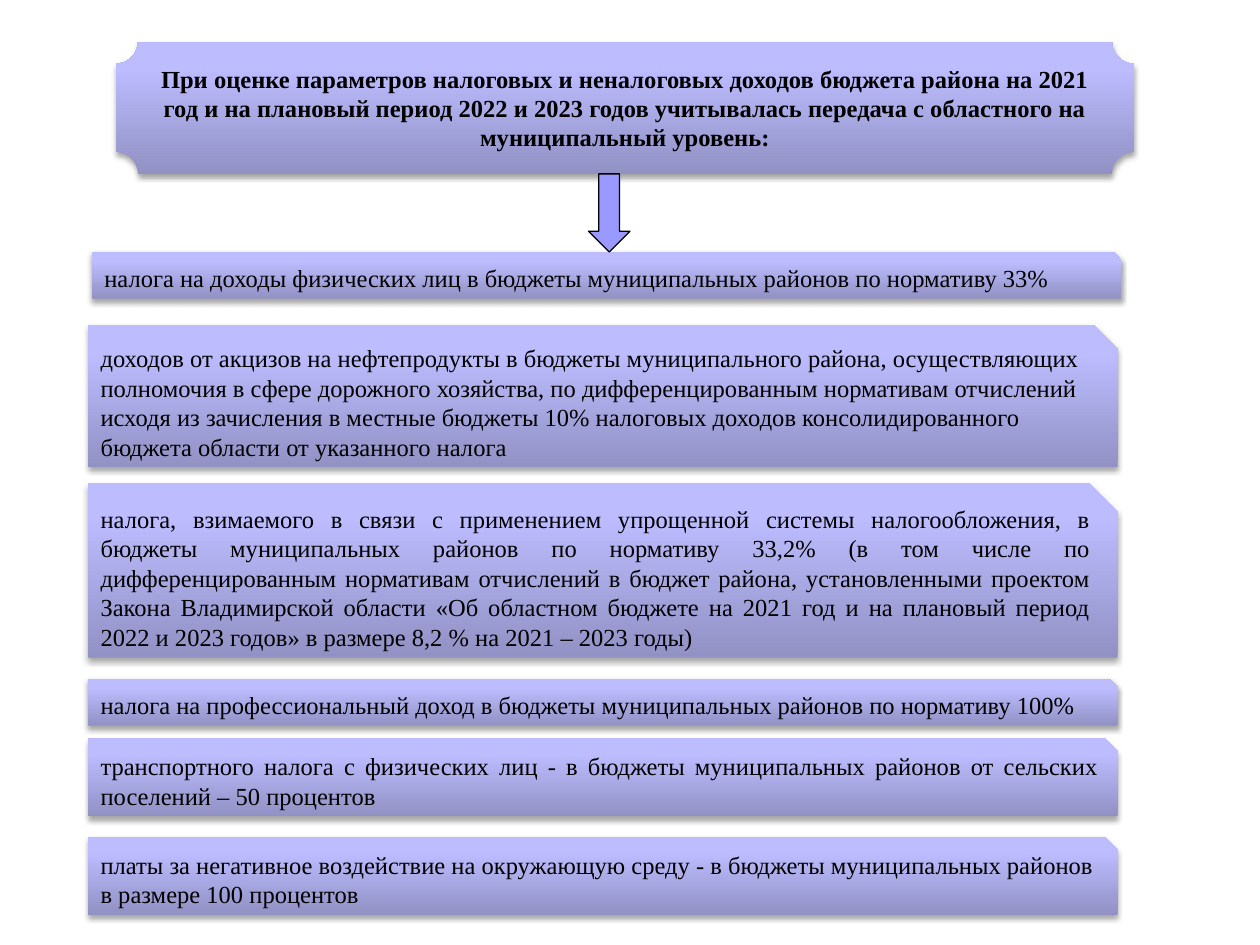
from copy import deepcopy

from lxml.etree import SubElement
from pptx import Presentation
from pptx.dml.color import RGBColor
from pptx.enum.shapes import MSO_SHAPE
from pptx.enum.text import MSO_ANCHOR, MSO_AUTO_SIZE, PP_ALIGN
from pptx.oxml.ns import qn
from pptx.util import Pt

GRADIENT = [(0, "9191C4"), (0.8, "BCBCFF"), (1, "BEBEFF")]
BOX_LEFT, BOX_WIDTH = 50.4, 588.24
TITLE = (
    "При оценке параметров налоговых и неналоговых доходов бюджета района на 2021 год "
    "и на плановый период 2022 и 2023 годов учитывалась передача с областного на "
    "муниципальный уровень:"
)
TAXES = [
    (52.56, 144, 26.64, PP_ALIGN.LEFT,
     "налога на доходы физических лиц в бюджеты муниципальных районов по нормативу 33%"),
    (BOX_LEFT, 185.76, 81.36, PP_ALIGN.LEFT,
     "доходов от акцизов на нефтепродукты в бюджеты муниципального района, осуществляющих "
     "полномочия в сфере дорожного хозяйства, по дифференцированным нормативам отчислений "
     "исходя из зачисления в местные бюджеты 10% налоговых доходов консолидированного "
     "бюджета области от указанного налога"),
    (BOX_LEFT, 275.76, 100.08, PP_ALIGN.JUSTIFY,
     "налога, взимаемого в связи с применением упрощенной системы налогообложения, в "
     "бюджеты муниципальных районов по нормативу 33,2% (в том числе по "
     "дифференцированным нормативам отчислений в бюджет района, установленными проектом "
     "Закона Владимирской области «Об областном бюджете на 2021 год и на плановый период "
     "2022 и 2023 годов» в размере 8,2 % на 2021 – 2023 годы)"),
    (BOX_LEFT, 388.08, 26.64, PP_ALIGN.LEFT,
     "налога на профессиональный доход в бюджеты муниципальных районов по нормативу 100%"),
    (BOX_LEFT, 421.92, 44.64, PP_ALIGN.JUSTIFY,
     "транспортного налога с физических лиц - в бюджеты муниципальных районов от сельских "
     "поселений – 50 процентов"),
    (BOX_LEFT, 478.08, 44.64, PP_ALIGN.LEFT,
     "платы за негативное воздействие на окружающую среду - в бюджеты муниципальных районов "
     "в размере 100 процентов"),
]


def color(value):
    """Turn a hex string into a colour."""
    return RGBColor.from_string(value)


def fill_gradient(shape):
    """Fill a shape with the vertical lilac gradient."""
    shape.fill.gradient()
    shape.fill.gradient_angle = 90
    stop_list = shape._element.spPr.find(".//" + qn("a:gsLst"))
    stop_list.append(deepcopy(stop_list[0]))
    for stop, (position, value) in zip(shape.fill.gradient_stops, GRADIENT):
        stop.position = position
        stop.color.rgb = color(value)


def add_shadow(shape):
    """Give a shape a soft black shadow below it."""
    shape.shadow.inherit = False
    effects = shape._element.spPr.find(qn("a:effectLst"))
    shadow = SubElement(effects, qn("a:outerShdw"), blurRad=str(Pt(3.1)),
                        dist=str(Pt(1.8)), dir="5400000", rotWithShape="0")
    black = SubElement(shadow, qn("a:srgbClr"), val="000000")
    SubElement(black, qn("a:alpha"), val="35000")


def add_panel(slide, kind, box, text, alignment, bold=False):
    """Add a gradient panel with one paragraph of text."""
    shape = slide.shapes.add_shape(kind, *map(Pt, box))
    fill_gradient(shape)
    shape.line.fill.background()
    add_shadow(shape)
    frame = shape.text_frame
    frame.word_wrap = True
    frame.auto_size = MSO_AUTO_SIZE.SHAPE_TO_FIT_TEXT
    frame.vertical_anchor = MSO_ANCHOR.MIDDLE
    paragraph = frame.paragraphs[0]
    paragraph.text = text
    paragraph.alignment = alignment
    paragraph.font.name = "Times New Roman"
    paragraph.font.size = Pt(14)
    paragraph.font.bold = bold
    paragraph.font.color.rgb = color("000000")


def add_arrow(slide, box):
    """Add the outlined block arrow pointing down."""
    arrow = slide.shapes.add_shape(MSO_SHAPE.DOWN_ARROW, *map(Pt, box))
    arrow.shadow.inherit = False
    arrow.fill.solid()
    arrow.fill.fore_color.rgb = color("9999FF")
    arrow.line.color.rgb = color("000000")
    arrow.line.width = Pt(0.75)


def main():
    """Build the slide about transferred taxes and save it."""
    presentation = Presentation()
    presentation.slide_width, presentation.slide_height = Pt(720), Pt(540)
    slide = presentation.slides.add_slide(presentation.slide_layouts[6])
    add_panel(slide, MSO_SHAPE.PLAQUE, (66.24, 23.76, 581.76, 75.6), TITLE,
              PP_ALIGN.CENTER, bold=True)
    for left, top, height, alignment, text in TAXES:
        add_panel(slide, MSO_SHAPE.SNIP_1_RECTANGLE, (left, top, BOX_WIDTH, height),
                  text, alignment)
    add_arrow(slide, (336.24, 99.36, 23.76, 44.64))
    presentation.save("out.pptx")


if __name__ == "__main__":
    main()
